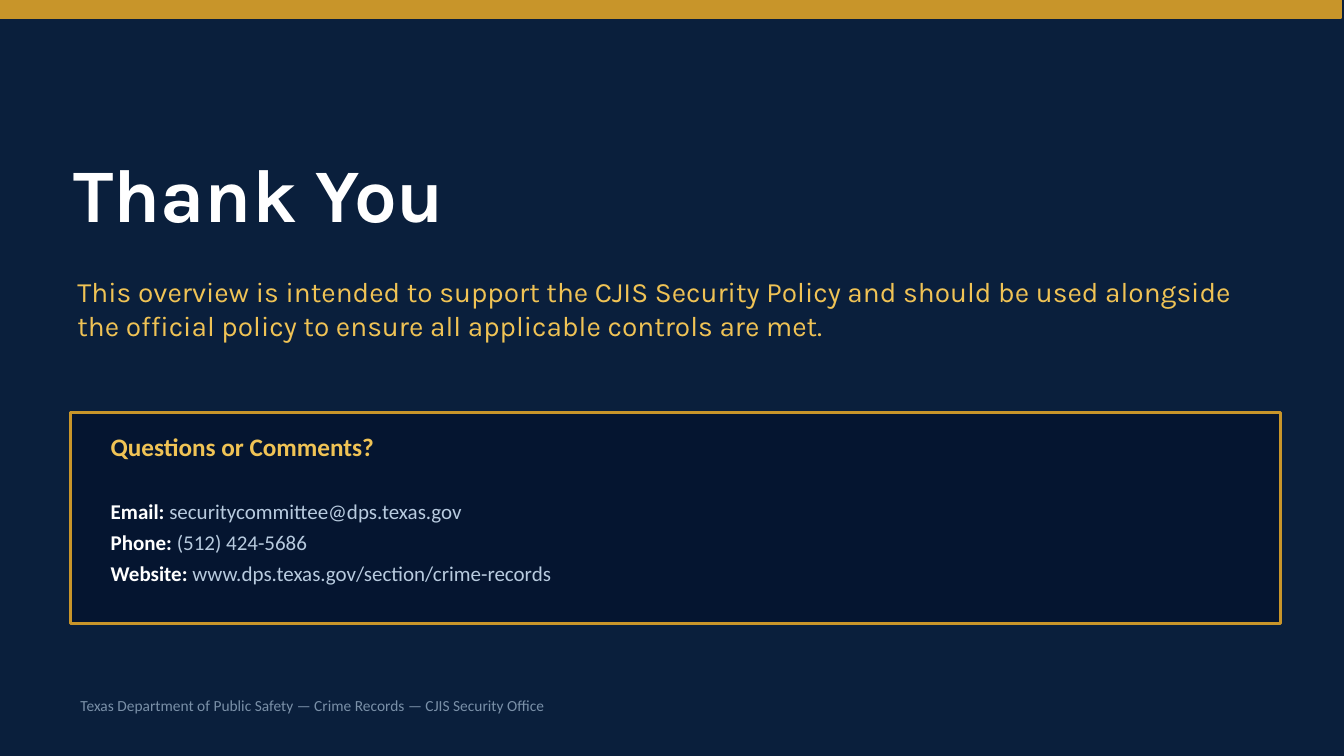
from dataclasses import dataclass

from pptx import Presentation
from pptx.dml.color import RGBColor
from pptx.enum.shapes import MSO_SHAPE
from pptx.enum.text import MSO_ANCHOR
from pptx.slide import Slide
from pptx.util import Inches, Pt

RECTANGLE = MSO_SHAPE.RECTANGLE
MIDDLE = MSO_ANCHOR.MIDDLE


@dataclass(frozen=True)
class Theme:
    navy: str = "0A1F3C"
    panel: str = "051530"
    gold: str = "C8952A"
    light_gold: str = "F0C355"
    white: str = "FFFFFF"
    pale_blue: str = "B8CBDF"
    muted: str = "7A90A8"
    heading_font: str = "Karla"
    body_font: str = "Calibri"
    title_size: int = 54
    message_size: int = 20
    question_size: int = 18
    contact_size: int = 15
    footer_size: int = 11


THEME = Theme()


@dataclass(frozen=True)
class Box:
    left: float
    top: float
    width: float
    height: float

    def lengths(self) -> tuple:
        return tuple(Inches(v) for v in (self.left, self.top, self.width, self.height))


@dataclass(frozen=True)
class Panel:
    box: Box
    fill: str
    border: float


@dataclass(frozen=True)
class Span:
    text: str
    color: str
    bold: bool = False


@dataclass(frozen=True)
class TextBlock:
    """Paragraphs of spans that share one font and size."""
    box: Box
    font: str
    size: int
    paragraphs: list[list[Span]]
    space_after: float = 0


CONTACTS = [
    ("Email: ", "securitycommittee@dps.texas.gov"),
    ("Phone: ", "(512) 424-5686"),
    ("Website: ", "www.dps.texas.gov/section/crime-records"),
]

PANELS = [
    Panel(Box(0, 0, 13.3, 0.18), THEME.gold, 1),
    Panel(Box(0.7, 4.09, 12, 2.1), THEME.panel, 2),
]

TEXT_BLOCKS = [
    TextBlock(Box(0.63, 1.31, 12, 1.2), THEME.heading_font, THEME.title_size,
              [[Span("Thank You", THEME.white, True)]]),
    TextBlock(Box(0.67, 2.31, 12, 1.5), THEME.heading_font, THEME.message_size,
              [[Span("This overview is intended to support the CJIS Security Policy "
                     "and should be used alongside the official policy to ensure "
                     "all applicable controls are met.", THEME.light_gold)]]),
    TextBlock(Box(1, 4.23, 11.4, 0.4), THEME.body_font, THEME.question_size,
              [[Span("Questions or Comments?", THEME.light_gold, True)]]),
    TextBlock(Box(1, 4.68, 11.4, 1.4), THEME.body_font, THEME.contact_size,
              [[Span(label, THEME.white, True), Span(value, THEME.pale_blue)]
               for label, value in CONTACTS], space_after=4),
    TextBlock(Box(0.7, 6.8, 12, 0.4), THEME.body_font, THEME.footer_size,
              [[Span("Texas Department of Public Safety — Crime Records — "
                     "CJIS Security Office", THEME.muted)]]),
]


def draw_panel(slide: Slide, panel: Panel) -> None:
    rectangle = slide.shapes.add_shape(RECTANGLE, *panel.box.lengths())
    rectangle.shadow.inherit = False
    rectangle.fill.solid()
    rectangle.fill.fore_color.rgb = RGBColor.from_string(panel.fill)
    rectangle.line.color.rgb = RGBColor.from_string(THEME.gold)
    rectangle.line.width = Pt(panel.border)


def style_font(font, span: Span) -> None:
    font.bold = span.bold
    font.color.rgb = RGBColor.from_string(span.color)


def draw_text(slide: Slide, block: TextBlock) -> None:
    frame = slide.shapes.add_textbox(*block.box.lengths()).text_frame
    frame.word_wrap = True
    frame.vertical_anchor = MIDDLE
    for index, spans in enumerate(block.paragraphs):
        paragraph = frame.add_paragraph() if index else frame.paragraphs[0]
        paragraph.space_after = Pt(block.space_after)
        paragraph.font.name = block.font
        paragraph.font.size = Pt(block.size)
        if len(spans) == 1:
            style_font(paragraph.font, spans[0])
        for span in spans:
            run = paragraph.add_run()
            run.text = span.text
            if len(spans) > 1:
                style_font(run.font, span)


def main() -> None:
    deck = Presentation()
    deck.slide_width, deck.slide_height = Inches(13.33), Inches(7.5)
    slide = deck.slides.add_slide(deck.slide_layouts[6])
    slide.background.fill.solid()
    slide.background.fill.fore_color.rgb = RGBColor.from_string(THEME.navy)
    for panel in PANELS:
        draw_panel(slide, panel)
    for block in TEXT_BLOCKS:
        draw_text(slide, block)
    deck.save("out.pptx")


if __name__ == "__main__":
    main()
